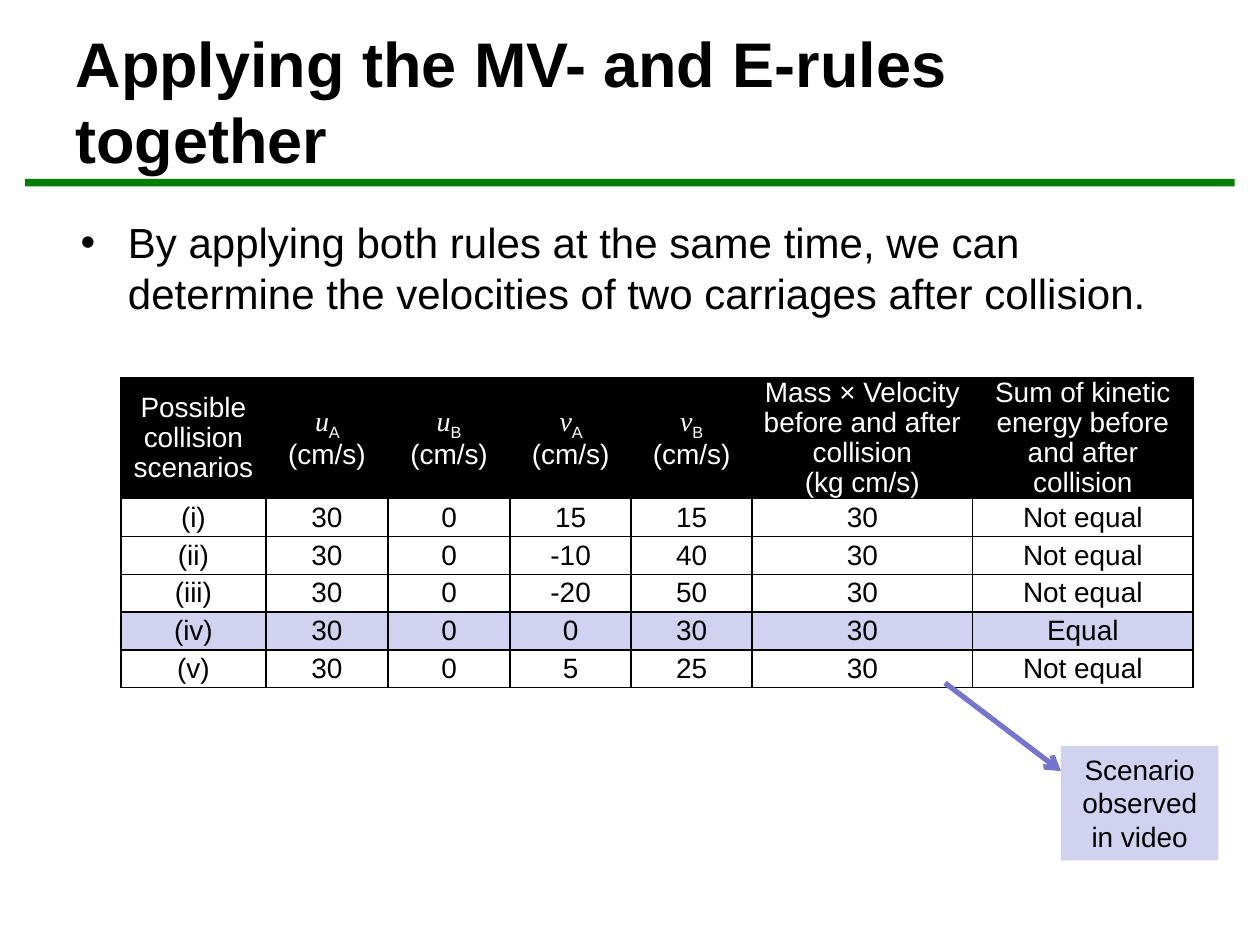
from lxml.etree import SubElement
from pptx import Presentation
from pptx.dml.color import RGBColor
from pptx.enum.shapes import MSO_CONNECTOR, MSO_SHAPE
from pptx.enum.text import MSO_ANCHOR, MSO_AUTO_SIZE, PP_ALIGN
from pptx.oxml.ns import qn
from pptx.util import Inches, Pt

BLACK = RGBColor(0x00, 0x00, 0x00)
WHITE = RGBColor(0xFF, 0xFF, 0xFF)
GREEN = RGBColor(0x00, 0x80, 0x00)
LAVENDER = RGBColor(0xD1, 0xD1, 0xF0)
VIOLET = RGBColor(0x75, 0x75, 0xD1)

TITLE = "Applying the MV- and E-rules together"
STATEMENT = (
    "By applying both rules at the same time, we can determine "
    "the velocities of two carriages after collision."
)
CALLOUT = "Scenario observed in video"
SYMBOLS = [("u", "A"), ("u", "B"), ("v", "A"), ("v", "B")]
SYMBOL_STYLES = [
    {"name": "Times New Roman", "italic": True},
    {"subscript": True},
    {},
]
HEADERS = [
    [["Possible collision scenarios"]],
    *[[[letter, f"{carriage} ", "(cm/s)"]] for letter, carriage in SYMBOLS],
    [["Mass × Velocity before and after collision"], ["(kg cm/s)"]],
    [["Sum of kinetic energy before and after collision"]],
]
SCENARIOS = [
    ("(i)", "30", "0", "15", "15", "30", "Not equal"),
    ("(ii)", "30", "0", "-10", "40", "30", "Not equal"),
    ("(iii)", "30", "0", "-20", "50", "30", "Not equal"),
    ("(iv)", "30", "0", "0", "30", "30", "Equal"),
    ("(v)", "30", "0", "5", "25", "30", "Not equal"),
]
OBSERVED = "(iv)"

SLIDE_WIDTH, SLIDE_HEIGHT = Inches(10), Inches(7.5)
PLACES = {
    "bar": (2, 18.93, 96, 0.8),
    "title": (5, 2.27, 90, 16.67),
    "table": (9.6, 40, 85.1, 32.13),
    "statement": (5.4, 22.27, 90, 11.07),
    "callout": (84.2, 78.93, 12.5, 12.13),
    "arrow": (84.2, 81.6, 75, 72.27),
}
COLUMN_SHARES = [11.5, 9.7, 9.7, 9.6, 9.6, 17.5, 17.5]
HEADER_SHARE, ROW_SHARE = 12.13, 4


def across(percent):
    """Return a share of the slide's width."""
    return round(SLIDE_WIDTH * percent / 100)


def down(percent):
    """Return a share of the slide's height."""
    return round(SLIDE_HEIGHT * percent / 100)


def box(name):
    """Return the two horizontal and two vertical lengths of a named place."""
    first, second, third, fourth = PLACES[name]
    return across(first), down(second), across(third), down(fourth)


def set_all(target, values):
    """Set every attribute in a dict of values."""
    for name, value in values.items():
        setattr(target, name, value)


def add_text(paragraph, text, size, color=BLACK, subscript=False, **style):
    """Add one formatted run to a paragraph."""
    run = paragraph.add_run()
    run.text = text
    set_all(run.font, {"name": "Arial", "size": Pt(size), **style})
    run.font.color.rgb = color
    if subscript:
        run.font._element.set("baseline", "-25000")


def fill_placeholder(shape, place, text, size, anchor, **style):
    """Move a placeholder and write its text."""
    set_all(shape, dict(zip(("left", "top", "width", "height"), box(place))))
    set_all(shape.text_frame, {
        "word_wrap": True, "auto_size": MSO_AUTO_SIZE.NONE, "vertical_anchor": anchor,
    })
    paragraph = shape.text_frame.paragraphs[0]
    paragraph.alignment = PP_ALIGN.LEFT
    add_text(paragraph, text, size, **style)


def add_block(slide, place, color):
    """Add a plain filled rectangle."""
    shape = slide.shapes.add_shape(MSO_SHAPE.RECTANGLE, *box(place))
    shape.shadow.inherit = False
    shape.fill.solid()
    shape.fill.fore_color.rgb = color
    shape.line.fill.background()
    return shape


def add_borders(cell):
    """Draw thin black lines on the four sides of a cell."""
    properties = cell._tc.get_or_add_tcPr()
    for index, side in enumerate(("lnL", "lnR", "lnT", "lnB")):
        line = properties.makeelement(qn(f"a:{side}"), {"w": str(Pt(1))})
        fill = SubElement(line, qn("a:solidFill"))
        SubElement(fill, qn("a:srgbClr"), val=str(BLACK))
        properties.insert(index, line)


def format_cell(cell, paragraphs, color, fill, spacing):
    """Write the paragraphs of a cell and set its look."""
    set_all(cell, {
        "margin_left": Inches(0.07), "margin_right": Inches(0.07),
        "margin_top": 0, "margin_bottom": 0, "vertical_anchor": MSO_ANCHOR.MIDDLE,
    })
    for index, pieces in enumerate(paragraphs):
        frame = cell.text_frame
        paragraph = frame.add_paragraph() if index else frame.paragraphs[0]
        set_all(paragraph, {"alignment": PP_ALIGN.CENTER, "line_spacing": spacing})
        styles = SYMBOL_STYLES if len(pieces) > 1 else [{}]
        for piece, style in zip(pieces, styles):
            add_text(paragraph, piece, 16, color, **style)
    if fill is None:
        cell.fill.background()
    else:
        cell.fill.solid()
        cell.fill.fore_color.rgb = fill
    add_borders(cell)


def add_scenarios(slide):
    """Add the table of collision scenarios."""
    table = slide.shapes.add_table(
        len(SCENARIOS) + 1, len(HEADERS), *box("table")
    ).table
    set_all(table, {"first_row": False, "horz_banding": False})
    for column, share in zip(table.columns, COLUMN_SHARES):
        column.width = across(share)
    for index, row in enumerate(table.rows):
        row.height = down(ROW_SHARE if index else HEADER_SHARE)
    for column, paragraphs in enumerate(HEADERS):
        format_cell(table.cell(0, column), paragraphs, WHITE, BLACK, 0.97)
    for row, values in enumerate(SCENARIOS, 1):
        fill = LAVENDER if values[0] == OBSERVED else None
        for column, value in enumerate(values):
            format_cell(table.cell(row, column), [[value]], BLACK, fill, 1.0)


def add_callout(slide):
    """Add the note on the observed scenario and its arrow."""
    note = add_block(slide, "callout", LAVENDER)
    set_all(note.text_frame, {"word_wrap": True, "vertical_anchor": MSO_ANCHOR.TOP})
    paragraph = note.text_frame.paragraphs[0]
    paragraph.alignment = PP_ALIGN.CENTER
    add_text(paragraph, CALLOUT, 16)
    arrow = slide.shapes.add_connector(MSO_CONNECTOR.STRAIGHT, *box("arrow"))
    arrow.line.color.rgb = VIOLET
    arrow.line.width = Pt(3)
    SubElement(arrow.line._get_or_add_ln(), qn("a:headEnd"), type="arrow")
    SubElement(arrow._element.spPr, qn("a:effectLst"))


def main():
    """Build and save the slide."""
    presentation = Presentation()
    set_all(presentation, {"slide_width": SLIDE_WIDTH, "slide_height": SLIDE_HEIGHT})
    slide = presentation.slides.add_slide(presentation.slide_layouts[1])
    add_block(slide, "bar", GREEN)
    title, statement = slide.placeholders
    fill_placeholder(title, "title", TITLE, 36, MSO_ANCHOR.MIDDLE, bold=True)
    fill_placeholder(statement, "statement", STATEMENT, 24, MSO_ANCHOR.TOP)
    add_scenarios(slide)
    add_callout(slide)
    presentation.save("out.pptx")


if __name__ == "__main__":
    main()
